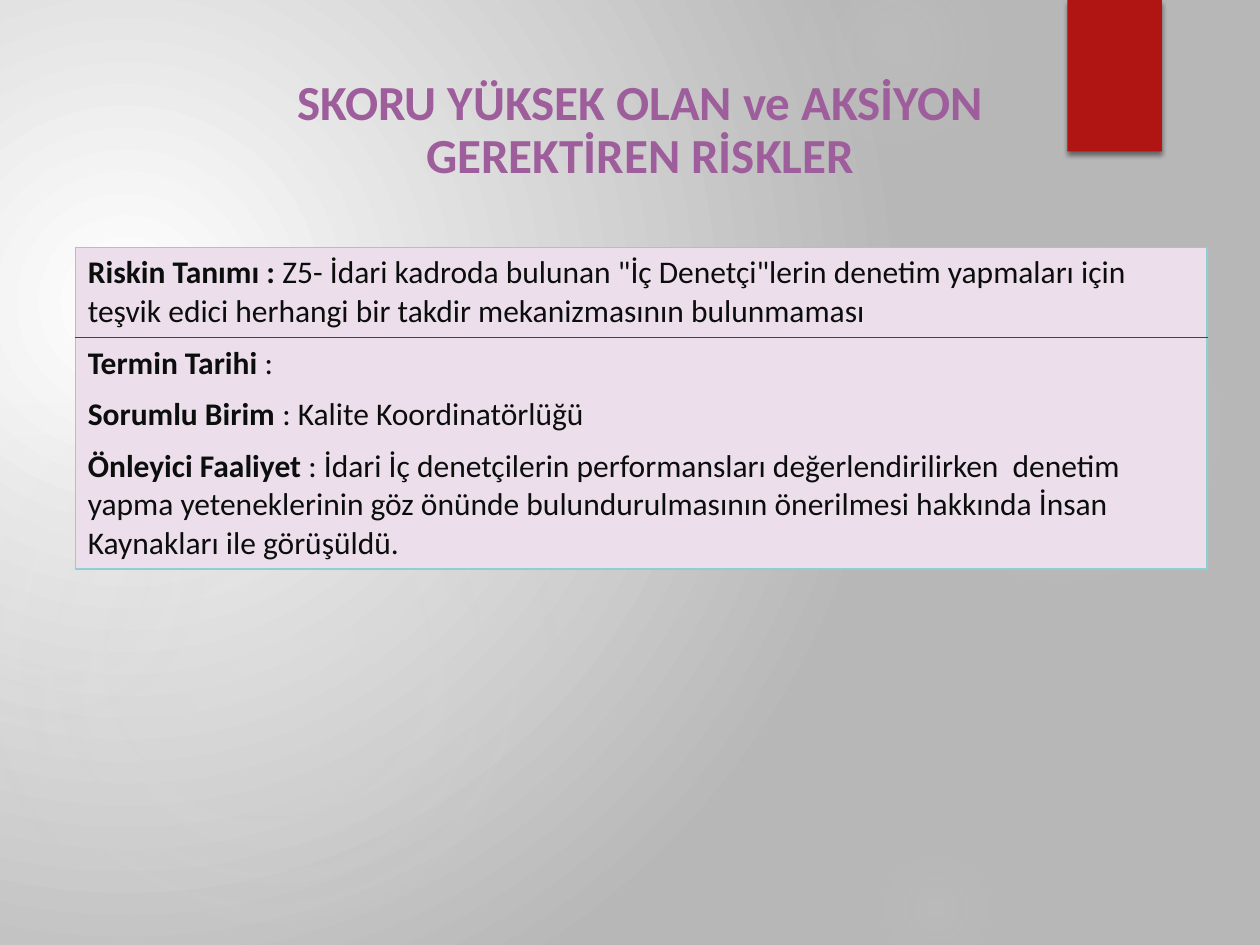
"""Build a slide with a title and a table that describes one risk."""
from lxml import etree
from pptx import Presentation
from pptx.dml.color import RGBColor
from pptx.enum.shapes import MSO_SHAPE
from pptx.enum.text import MSO_ANCHOR, MSO_AUTO_SIZE, PP_ALIGN
from pptx.oxml.ns import nsdecls, qn
from pptx.util import Pt

OVAL, RECT = MSO_SHAPE.OVAL, MSO_SHAPE.RECTANGLE
BOTTOM, CENTER, FIXED = MSO_ANCHOR.BOTTOM, PP_ALIGN.CENTER, MSO_AUTO_SIZE.NONE
COLORS = {
    "white": "FFFFFF", "gray": "B7B7B7", "glow": "D9D9D9", "red": "B01513",
    "title": "9E5E9B", "text": "0C0D0D", "cell": "ECDFEB", "edge": "8AD0D5",
}
PLAIN = "{2D5ABB26-0587-4C30-8999-92F81FD0307C}"

GLOWS = [
    (496, 132, 222, (7, 6, 0), 69),
    (448, -36, 126, (14, 7, 0), 73),
    (496, 480, 78, (9, 5, 0), 66),
    (-12, 210, 330, (11, 10, 0), 75),
    (-66, 228, 186, (8, 8, 0), 72),
]
ROWS = [
    (51.5, "Riskin Tanımı : ",
     'Z5- İdari kadroda bulunan "İç Denetçi"lerin denetim yapmaları için '
     "teşvik edici herhangi bir takdir mekanizmasının bulunmaması"),
    (29.5, "Termin Tarihi ", ":"),
    (29.5, "Sorumlu Birim ", ": Kalite Koordinatörlüğü"),
    (73, "Önleyici Faaliyet ",
     ": İdari İç denetçilerin performansları değerlendirilirken  denetim "
     "yapma yeteneklerinin göz önünde bulundurulmasının önerilmesi hakkında "
     "İnsan Kaynakları ile görüşüldü."),
]


def write(para, text, size=18, color="text", bold=False, face="Calibri"):
    """Add a formatted run to a paragraph."""
    run = para.add_run()
    run.text = text
    font = run.font
    font.name, font.size, font.bold = face, Pt(size), bold
    font.color.rgb = RGBColor.from_string(COLORS[color])


def blend(fill, root, stops, focus):
    """Give a fill a round gradient of (place, color, opacity) stops."""
    fill.gradient()
    marks = "".join(
        f'<a:gs pos="{pos * 1000}"><a:srgbClr val="{COLORS[color]}">'
        f'<a:alpha val="{alpha * 1000}"/></a:srgbClr></a:gs>'
        for pos, color, alpha in stops)
    sides = " ".join(f'{side}="{part * 1000}"' for side, part in zip("ltrb", focus))
    old = root.find(".//" + qn("a:gradFill"))
    old.getparent().replace(old, etree.fromstring(
        f'<a:gradFill {nsdecls("a")} rotWithShape="1"><a:gsLst>{marks}</a:gsLst>'
        f'<a:path path="circle"><a:fillToRect {sides}/></a:path></a:gradFill>'))


class Deck:
    """Hold the style and the current slide."""

    def __init__(self):
        """Open a one-slide deck."""
        self.show = Presentation()
        self.show.slide_width, self.show.slide_height = Pt(720), Pt(540)
        self.slide = self.show.slides.add_slide(self.show.slide_layouts[5])

    def back(self):
        """Paint the background."""
        blend(self.slide.background.fill, self.slide.element,
              [(0, "white", 100), (100, "gray", 100)], (45, 65, 125, 100))

    def shape(self, kind, x, y, w, h):
        """Add a shape with no line or shadow."""
        item = self.slide.shapes.add_shape(kind, Pt(x), Pt(y), Pt(w), Pt(h))
        item.shadow.inherit = False
        item.line.fill.background()
        return item

    def glow(self, x, y, size, alphas, end):
        """Add a faint round light."""
        item = self.shape(OVAL, x, y, size, size)
        stops = [(pos, "glow", alpha) for pos, alpha in zip((0, 36, end), alphas)]
        blend(item.fill, item.element.spPr, stops, (50, 50, 50, 50))

    def flag(self, x, y, w, h):
        """Add the red tab with its soft shadow."""
        item = self.shape(RECT, x, y, w, h)
        item.fill.solid()
        item.fill.fore_color.rgb = RGBColor.from_string(COLORS["red"])
        item.element.spPr.find(qn("a:effectLst")).append(etree.fromstring(
            f'<a:outerShdw {nsdecls("a")} blurRad="{Pt(3)}" dist="{Pt(2)}" '
            'dir="5400000" rotWithShape="0"><a:srgbClr val="000000">'
            '<a:alpha val="45000"/></a:srgbClr></a:outerShdw>'))

    def title(self, text, x, y, w, h):
        """Fill the title and bring it to the front."""
        item = self.slide.shapes.title
        item.left, item.top, item.width, item.height = Pt(x), Pt(y), Pt(w), Pt(h)
        frame = item.text_frame
        frame.word_wrap, frame.auto_size = True, FIXED
        frame.vertical_anchor = BOTTOM
        para = frame.paragraphs[0]
        para.alignment, para.line_spacing = CENTER, 0.9
        para.space_before, para.space_after = Pt(0), Pt(6)
        write(para, text, size=28, color="title", bold=True)
        self.slide.shapes._spTree.append(item.element)

    def edge(self, cell, side, color):
        """Draw one border of a cell."""
        cell._tc.get_or_add_tcPr().append(etree.fromstring(
            f'<a:ln{side} {nsdecls("a")} w="{Pt(1)}"><a:solidFill>'
            f'<a:srgbClr val="{COLORS[color]}"/></a:solidFill></a:ln{side}>'))

    def table(self, rows, x, y, widths):
        """Add the framed table with a red rule below its first row."""
        high = sum(row[0] for row in rows)
        item = self.slide.shapes.add_table(
            len(rows), len(widths), Pt(x), Pt(y), Pt(sum(widths)), Pt(high))
        grid = item.table
        grid.first_row = grid.horz_banding = False
        item.element.find(".//" + qn("a:tableStyleId")).text = PLAIN
        for col, width in zip(grid.columns, widths):
            col.width = Pt(width)
        last = len(rows) - 1
        for i, (height, label, text) in enumerate(rows):
            grid.rows[i].height = Pt(height)
            for j in range(len(widths)):
                cell = grid.cell(i, j)
                self.edge(cell, "R" if j else "L", "edge")
                if i == 0:
                    self.edge(cell, "T", "edge")
                if i in (0, last):
                    self.edge(cell, "B", "edge" if i else "red")
                cell.fill.solid()
                cell.fill.fore_color.rgb = RGBColor.from_string(COLORS["cell"])
            para = grid.cell(i, 0).text_frame.paragraphs[0]
            write(para, label, bold=True)
            write(para, text)


def main():
    """Build and save the slide."""
    deck = Deck()
    deck.back()
    for glow in GLOWS:
        deck.glow(*glow)
    deck.flag(610, 0, 54, 86.5)
    deck.title("SKORU YÜKSEK OLAN ve AKSİYON GEREKTİREN RİSKLER",
               158.5, 42, 414.5, 67)
    deck.table(ROWS, 43, 141.5, (629.5, 16.5))
    deck.show.save("out.pptx")


if __name__ == "__main__":
    main()
